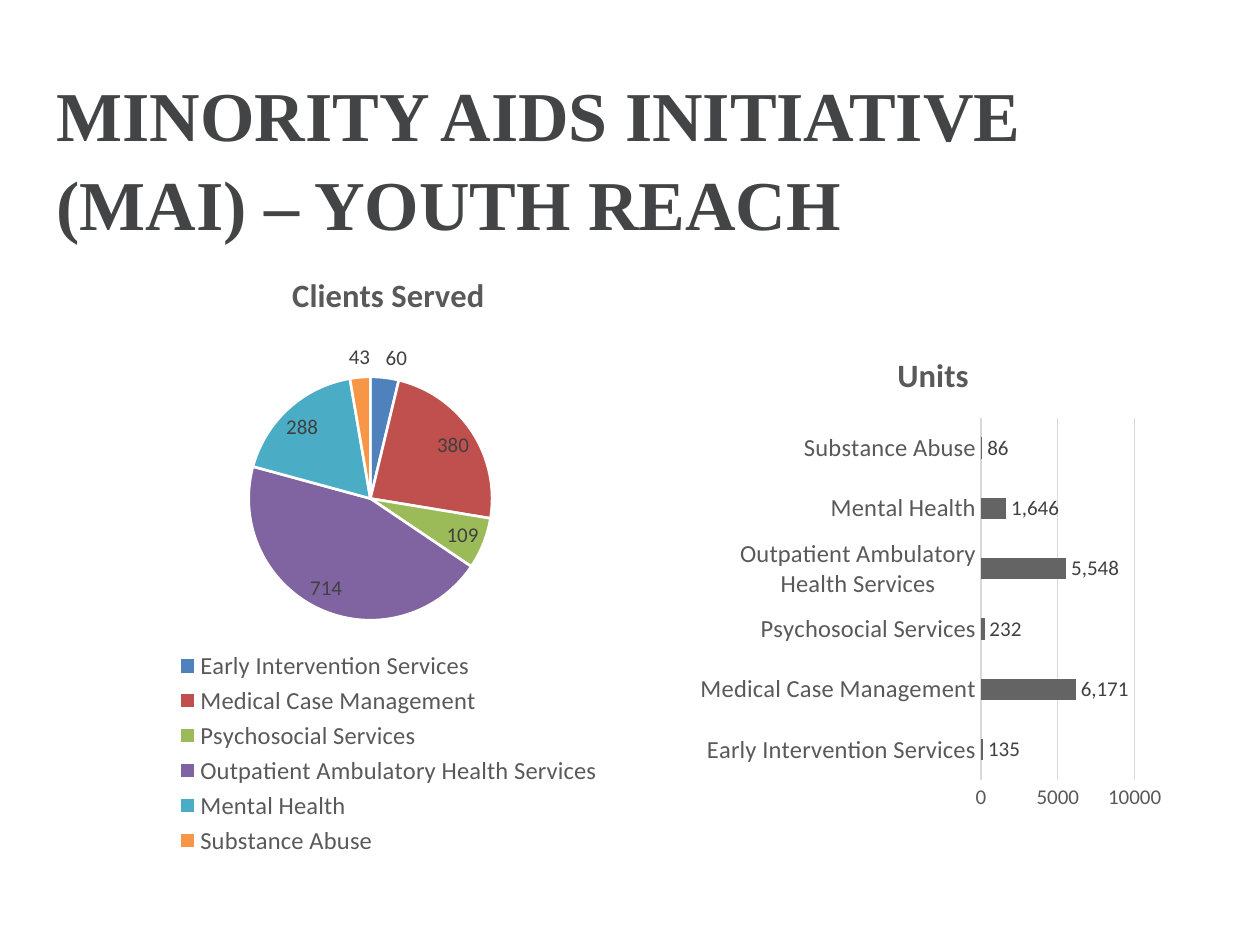
"""Build a slide with a pie chart of clients served and a bar chart of service units."""
from dataclasses import dataclass

import lxml.etree
import pptx
import pptx.chart.chart
import pptx.chart.data
import pptx.dml.color
import pptx.enum.chart
import pptx.enum.text
import pptx.oxml.ns
import pptx.slide
import pptx.text.text
import pptx.util

Cm = pptx.util.Cm
RGBColor = pptx.dml.color.RGBColor
ChartType = pptx.enum.chart.XL_CHART_TYPE
LabelPosition = pptx.enum.chart.XL_LABEL_POSITION
qn = pptx.oxml.ns.qn

WHITE = RGBColor(0xFF, 0xFF, 0xFF)
TITLE_GREY = RGBColor(0x43, 0x44, 0x45)
TEXT_GREY = RGBColor(0x59, 0x59, 0x59)
LABEL_GREY = RGBColor(0x40, 0x40, 0x40)
LINE_GREY = RGBColor(0xD9, 0xD9, 0xD9)
BAR_GREY = RGBColor(0x64, 0x64, 0x64)
SLICE_COLOURS = (
    RGBColor(0x4F, 0x81, 0xBD),
    RGBColor(0xC0, 0x50, 0x4D),
    RGBColor(0x9B, 0xBB, 0x59),
    RGBColor(0x80, 0x64, 0xA2),
    RGBColor(0x4B, 0xAC, 0xC6),
    RGBColor(0xF7, 0x96, 0x46),
)
SERVICES = (
    "Early Intervention Services",
    "Medical Case Management",
    "Psychosocial Services",
    "Outpatient Ambulatory Health Services",
    "Mental Health",
    "Substance Abuse",
)


@dataclass(frozen=True)
class Area:
    """Left, top, width and height."""
    left: float
    top: float
    width: float
    height: float


@dataclass(frozen=True)
class ServiceChart:
    """A chart of one value per service, placed in centimetres."""
    name: str
    kind: ChartType
    values: tuple[int, ...]
    box: Area
    plot_area: Area
    label_position: LabelPosition
    label_format: str


CLIENTS = ServiceChart(
    "Clients Served", ChartType.PIE, (60, 380, 109, 714, 288, 43),
    Area(1.7, 4.98, 12.27, 12.37), Area(0.27, 0.21, 0.4, 0.4),
    LabelPosition.BEST_FIT, "General")
UNITS = ServiceChart(
    "Units", ChartType.BAR_CLUSTERED, (135, 6171, 232, 5548, 1646, 86),
    Area(13.97, 6.65, 9.68, 9.86), Area(0.6, 0.18, 0.32, 0.74),
    LabelPosition.OUTSIDE_END, "#,##0")
LEGEND_AREA = Area(0.14, 0.65, 0.72, 0.35)


def style_font(font: pptx.text.text.Font, size: float, colour: RGBColor,
               bold: bool = False, name: str = "Calibri") -> None:
    """Set the look of a font."""
    font.name, font.size, font.bold = name, pptx.util.Pt(size), bold
    font.color.rgb = colour


def set_layout(parent: lxml.etree.ElementBase, area: Area, index: int,
               inner: bool = False) -> None:
    """Give a chart part a manual layout as fractions of the chart."""
    for old in parent.findall(qn("c:layout")):
        parent.remove(old)
    layout = parent.makeelement(qn("c:layout"))
    parent.insert(index, layout)
    manual = lxml.etree.SubElement(layout, qn("c:manualLayout"))
    settings = {"layoutTarget": "inner"} if inner else {}
    settings |= {"xMode": "edge", "yMode": "edge", "x": area.left,
                 "y": area.top, "w": area.width, "h": area.height}
    for tag, value in settings.items():
        lxml.etree.SubElement(manual, qn(f"c:{tag}")).set("val", str(value))


def add_service_chart(page: pptx.slide.Slide,
                      service: ServiceChart) -> pptx.chart.chart.Chart:
    """Add a titled chart with value labels."""
    data = pptx.chart.data.CategoryChartData()
    data.categories = SERVICES
    data.add_series(service.name, service.values)
    box = service.box
    chart = page.shapes.add_chart(
        service.kind, Cm(box.left), Cm(box.top), Cm(box.width),
        Cm(box.height), data).chart
    chart.font.name, chart.font.size = "Calibri", pptx.util.Pt(10)
    chart.has_title, chart.has_legend = True, False
    chart.chart_title.include_in_layout = False
    title = chart.chart_title.text_frame
    title.text = service.name
    style_font(title.paragraphs[0].runs[0].font, 18.6, TEXT_GREY, True)
    labels = chart.plots[0].series[0].data_labels
    labels.show_value = True
    labels.position = service.label_position
    labels.number_format = service.label_format
    labels.number_format_is_linked = False
    style_font(labels.font, 12, LABEL_GREY)
    set_layout(chart.element.find(f".//{qn('c:plotArea')}"),
               service.plot_area, 0, inner=True)
    return chart


def style_pie(chart: pptx.chart.chart.Chart) -> None:
    """Colour the slices and place the legend below them."""
    chart.plots[0].vary_by_categories = True
    for index, colour in enumerate(SLICE_COLOURS):
        look = chart.plots[0].series[0].points[index].format
        look.fill.solid()
        look.fill.fore_color.rgb = colour
        look.line.color.rgb = WHITE
        look.line.width = pptx.util.Pt(1.5)
    chart.has_legend = True
    chart.legend.position = pptx.enum.chart.XL_LEGEND_POSITION.BOTTOM
    chart.legend.include_in_layout = False
    style_font(chart.legend.font, 14, TEXT_GREY)
    set_layout(chart.element.find(f".//{qn('c:legend')}"), LEGEND_AREA, 1)


def style_bars(chart: pptx.chart.chart.Chart) -> None:
    """Format the bars, axes and gridlines."""
    plot = chart.plots[0]
    plot.gap_width, plot.vary_by_categories = 182, False
    fill = plot.series[0].format.fill
    fill.solid()
    fill.fore_color.rgb = BAR_GREY
    for axis, size in ((chart.category_axis, 14), (chart.value_axis, 12)):
        axis.major_tick_mark = pptx.enum.chart.XL_TICK_MARK.NONE
        axis.minor_tick_mark = pptx.enum.chart.XL_TICK_MARK.NONE
        style_font(axis.tick_labels.font, size, TEXT_GREY)
    values = chart.value_axis
    values.minimum_scale, values.maximum_scale = 0, 10000
    values.major_unit = 5000
    values.has_major_gridlines = True
    values.tick_labels.number_format = "General"
    values.tick_labels.number_format_is_linked = False
    values.format.line.fill.background()
    for line in (chart.category_axis.format.line,
                 values.major_gridlines.format.line):
        line.color.rgb = LINE_GREY
        line.width = pptx.util.Pt(0.75)


def add_title(page: pptx.slide.Slide) -> None:
    """Place and format the slide title."""
    title = page.shapes.title
    title.left, title.top = Cm(0.89), Cm(1.24)
    title.width, title.height = Cm(22.86), Cm(3.18)
    frame = title.text_frame
    frame.text = "MINORITY AIDS INITIATIVE (MAI) – YOUTH REACH"
    frame.word_wrap = True
    frame.auto_size = pptx.enum.text.MSO_AUTO_SIZE.NONE
    frame.vertical_anchor = pptx.enum.text.MSO_ANCHOR.TOP
    para = frame.paragraphs[0]
    para.alignment = pptx.enum.text.PP_ALIGN.LEFT
    para.line_spacing = 1.05
    style_font(para.runs[0].font, 40, TITLE_GREY, True, "Times New Roman")


def main() -> None:
    """Build and save the deck."""
    deck = pptx.Presentation()
    deck.slide_width, deck.slide_height = Cm(25.4), Cm(19.05)
    page = deck.slides.add_slide(deck.slide_layouts[5])
    add_title(page)
    style_pie(add_service_chart(page, CLIENTS))
    style_bars(add_service_chart(page, UNITS))
    deck.save("out.pptx")


if __name__ == "__main__":
    main()
